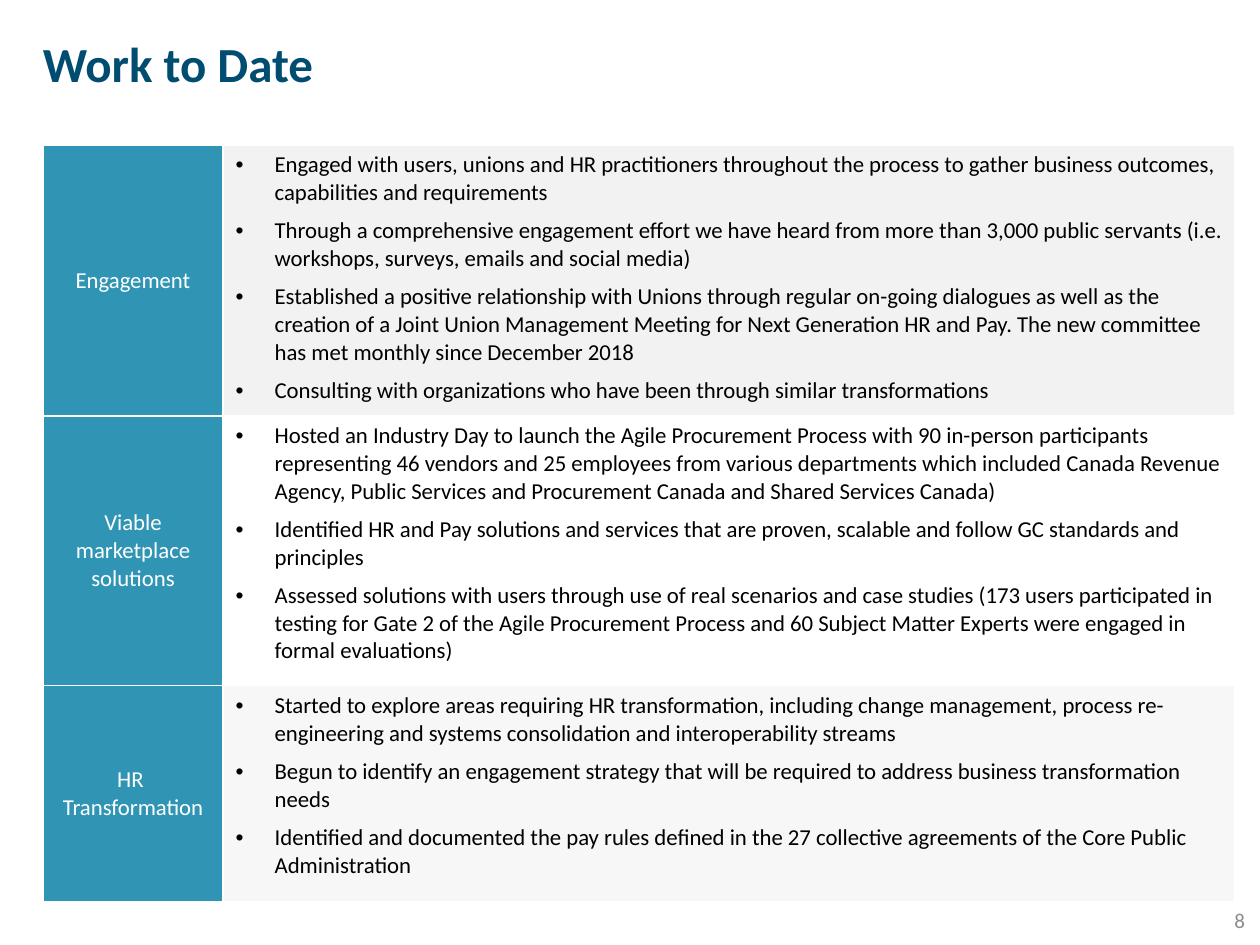
from lxml import etree
from pptx import Presentation
from pptx.dml.color import RGBColor
from pptx.enum.text import MSO_ANCHOR, MSO_AUTO_SIZE, PP_ALIGN
from pptx.oxml.ns import qn
from pptx.util import Inches, Pt

TOP, MIDDLE = MSO_ANCHOR.TOP, MSO_ANCHOR.MIDDLE
LEFT, CENTER, RIGHT = PP_ALIGN.LEFT, PP_ALIGN.CENTER, PP_ALIGN.RIGHT
NAVY = RGBColor(0x00, 0x4D, 0x71)
TEAL = RGBColor(0x30, 0x95, 0xB4)
WHITE = RGBColor(0xFF, 0xFF, 0xFF)
BLACK = RGBColor(0x00, 0x00, 0x00)
GRAY = RGBColor(0x8C, 0x8C, 0x8C)
BAND = RGBColor(0xF2, 0xF2, 0xF2)
PALE_BAND = RGBColor(0xF7, 0xF7, 0xF7)
FONT = "Calibri"
INDENT = Inches(0.31)

# Content: label lines, row height, band colour, bullets
TITLE = "Work to Date"
PAGE_NUMBER = "8"
COLUMN_WIDTHS = [1.43, 8.03]
ROWS = [
    (["Engagement"], 2.15, BAND, [
        "Engaged with users, unions and HR practitioners throughout the process to gather "
        "business outcomes, capabilities and requirements",
        "Through a comprehensive engagement effort we have heard from more than 3,000 public "
        "servants (i.e. workshops, surveys, emails and social media)",
        "Established a positive relationship with Unions through regular on-going dialogues as "
        "well as the creation of a Joint Union Management Meeting for Next Generation HR and "
        "Pay. The new committee has met monthly since December 2018",
        "Consulting with organizations who have been through similar transformations",
    ]),
    (["Viable", "marketplace solutions"], 2.14, None, [
        "Hosted an Industry Day to launch the Agile Procurement Process with 90 in-person "
        "participants representing 46 vendors and 25 employees from various departments which "
        "included Canada Revenue Agency, Public Services and Procurement Canada and Shared "
        "Services Canada)",
        "Identified HR and Pay solutions and services that are proven, scalable and follow GC "
        "standards and principles",
        "Assessed solutions with users through use of real scenarios and case studies (173 users "
        "participated in testing for Gate 2 of the Agile Procurement Process and 60 Subject "
        "Matter Experts were engaged in formal evaluations)",
    ]),
    (["HR ", "Transformation"], 1.72, PALE_BAND, [
        "Started to explore areas requiring HR transformation, including change management, "
        "process re-engineering and systems consolidation and interoperability streams",
        "Begun to identify an engagement strategy that will be required to address business "
        "transformation needs",
        "Identified and documented the pay rules defined in the 27 collective agreements of the "
        "Core Public Administration",
    ]),
]


def add_span(para, text, size, color, bold=False):
    span = para.add_run()
    span.text = text
    span.font.name = FONT
    span.font.size = Pt(size)
    span.font.bold = bold
    span.font.color.rgb = color


def add_bullet(para):
    properties = para._p.get_or_add_pPr()
    properties.set("marL", str(INDENT))
    properties.set("indent", str(-INDENT))
    etree.SubElement(properties, qn("a:buFont"), typeface="Arial")
    etree.SubElement(properties, qn("a:buChar"), char="•")


def fill_cell(cell, color):
    if color is None:
        cell.fill.background()
    else:
        cell.fill.solid()
        cell.fill.fore_color.rgb = color


deck = Presentation()
deck.slide_width, deck.slide_height = Inches(10), Inches(7.5)
page = deck.slides.add_slide(deck.slide_layouts[5])

# Title
title = page.shapes.title
title.left, title.top = Inches(0.34), Inches(0.36)
title.width, title.height = Inches(8.97), Inches(0.51)
frame = title.text_frame
frame.auto_size = MSO_AUTO_SIZE.NONE
frame.vertical_anchor = TOP
frame.margin_left = frame.margin_top = frame.margin_right = frame.margin_bottom = 0
para = frame.paragraphs[0]
para.alignment = LEFT
para.line_spacing = 0.8
add_span(para, TITLE, 28, NAVY, bold=True)

# Table
table = page.shapes.add_table(
    len(ROWS), len(COLUMN_WIDTHS), Inches(0.34), Inches(1.15),
    Inches(sum(COLUMN_WIDTHS)), Inches(sum(row[1] for row in ROWS))).table
table.first_row = table.horz_banding = False
for column, width in zip(table.columns, COLUMN_WIDTHS):
    column.width = Inches(width)

for index, (label_lines, height, band, bullets) in enumerate(ROWS):
    table.rows[index].height = Inches(height)
    label, detail = table.cell(index, 0), table.cell(index, 1)
    fill_cell(label, TEAL)
    fill_cell(detail, band)

    label.vertical_anchor = MIDDLE
    para = label.text_frame.paragraphs[0]
    para.alignment = CENTER
    for line_index, line in enumerate(label_lines):
        if line_index:
            para.add_line_break()
        add_span(para, line, 13, WHITE)

    detail.vertical_anchor = TOP
    frame = detail.text_frame
    for bullet_index, bullet in enumerate(bullets):
        para = frame.add_paragraph() if bullet_index else frame.paragraphs[0]
        para.space_after = Pt(6)
        add_bullet(para)
        add_span(para, bullet, 13, BLACK)

# Page number
box = page.shapes.add_textbox(Inches(7.65), Inches(7.1), Inches(2.33), Inches(0.4))
box.text_frame.word_wrap = True
box.text_frame.vertical_anchor = MIDDLE
para = box.text_frame.paragraphs[0]
para.alignment = RIGHT
add_span(para, PAGE_NUMBER, 12, GRAY)

deck.save("out.pptx")
